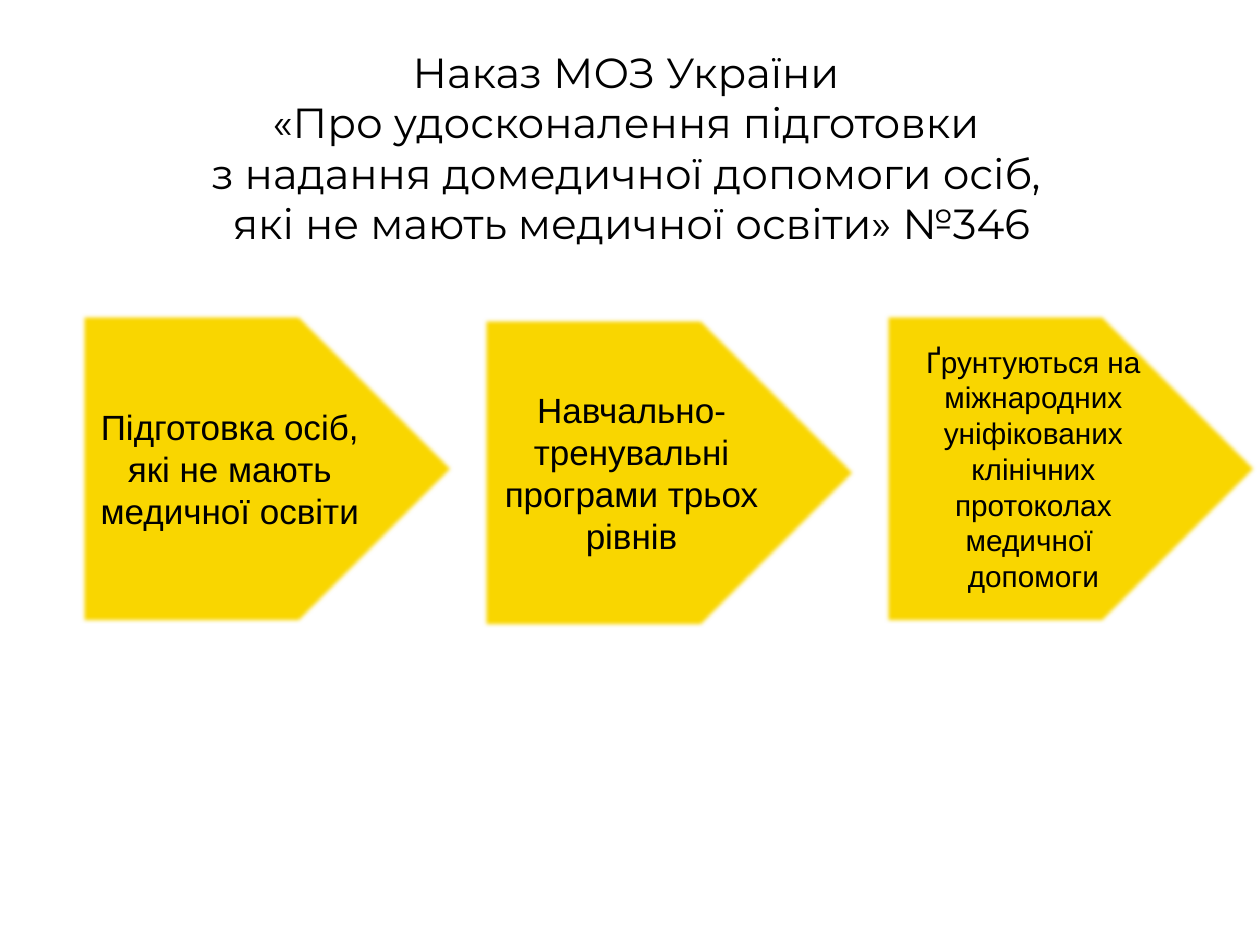
from dataclasses import dataclass

from lxml.etree import SubElement
from pptx import Presentation
from pptx.dml.color import RGBColor
from pptx.enum.shapes import MSO_SHAPE
from pptx.enum.text import MSO_ANCHOR, MSO_AUTO_SIZE, PP_ALIGN
from pptx.oxml.ns import qn
from pptx.shapes.autoshape import Shape
from pptx.slide import Slide
from pptx.text.text import TextFrame
from pptx.util import Cm, Pt

COLORS = {"arrow": "F9D600", "text": "000000"}

ARROW_WIDTH, ARROW_HEIGHT = Cm(7.57), Cm(6.25)
FIRST_LEFT, ARROW_STEP = Cm(1.63), Cm(8.1)
SOFT_EDGE = Pt(2.5)

HEADING = [
    "Наказ МОЗ України \v«Про удосконалення підготовки ",
    "з надання домедичної допомоги осіб, ",
    "які не мають медичної освіти» №346",
]


@dataclass
class Step:
    paragraphs: list[str]
    top: float = 6.32
    size: float = 20


STEPS = [
    Step(["Підготовка осіб, які не мають медичної освіти"]),
    Step(["Навчально-тренувальні програми трьох рівнів"], top=6.4),
    Step(["Ґрунтуються на міжнародних уніфікованих клінічних протоколах медичної ",
          "допомоги"], size=17),
]


def write_text(frame: TextFrame, paragraphs: list[str], *, font: str, size: float,
               anchor: MSO_ANCHOR, wrap: bool = True) -> None:
    frame.auto_size = MSO_AUTO_SIZE.NONE
    frame.word_wrap = wrap
    frame.vertical_anchor = anchor
    for index, wording in enumerate(paragraphs):
        paragraph = frame.paragraphs[0] if index == 0 else frame.add_paragraph()
        paragraph.text = wording
        paragraph.alignment = PP_ALIGN.CENTER
        paragraph.space_before = Pt(0)
        for run in paragraph.runs:
            run.font.name = font
            run.font.size = Pt(size)
            run.font.color.rgb = RGBColor.from_string(COLORS["text"])


def soften_edges(arrow: Shape) -> None:
    """Replace the theme shadow with a soft edge."""
    arrow.shadow.inherit = False
    effects = arrow.element.spPr.find(qn("a:effectLst"))
    SubElement(effects, qn("a:softEdge"), rad=str(int(SOFT_EDGE)))


def add_step(slide: Slide, step: Step, position: int) -> None:
    arrow = slide.shapes.add_shape(
        MSO_SHAPE.PENTAGON, FIRST_LEFT + position * ARROW_STEP, Cm(step.top),
        ARROW_WIDTH, ARROW_HEIGHT)
    arrow.fill.solid()
    arrow.fill.fore_color.rgb = RGBColor.from_string(COLORS["arrow"])
    arrow.line.fill.background()
    soften_edges(arrow)
    write_text(arrow.text_frame, step.paragraphs, font="Arial", size=step.size,
               anchor=MSO_ANCHOR.MIDDLE)


def add_heading(slide: Slide) -> None:
    title = slide.shapes.title
    title.left, title.top, title.width, title.height = Cm(3.18), Cm(0.81), Cm(19.1), Cm(4.37)
    write_text(title.text_frame, HEADING, font="Montserrat", size=24,
               anchor=MSO_ANCHOR.TOP, wrap=False)


def main() -> None:
    presentation = Presentation()
    presentation.slide_width, presentation.slide_height = Cm(25.4), Cm(19.05)
    slide = presentation.slides.add_slide(presentation.slide_layouts.get_by_name("Title Only"))
    add_heading(slide)
    for position, step in enumerate(STEPS):
        add_step(slide, step, position)
    presentation.save("out.pptx")


if __name__ == "__main__":
    main()
